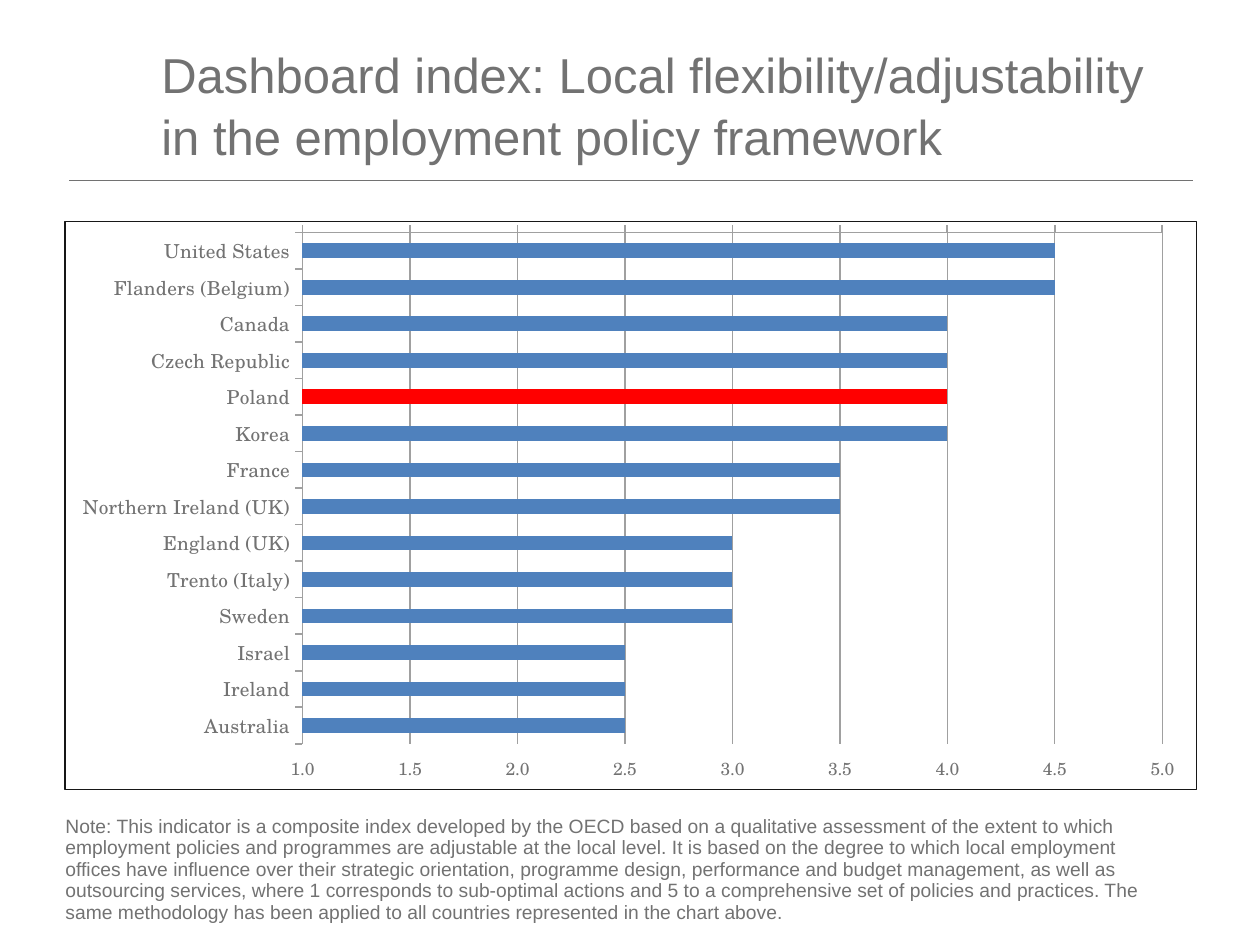
import pptx
import pptx.chart.data
import pptx.dml.color
import pptx.enum.chart
import pptx.enum.shapes
import pptx.enum.text
import pptx.oxml
import pptx.oxml.ns
import pptx.util

Pt = pptx.util.Pt
COLORS = {"text": "727272", "bar": "4F81BD", "highlight": "FF0000",
          "axis": "A0A0A0", "frame": "171717", "white": "FFFFFF"}
TITLE = "Dashboard index: Local flexibility/adjustability in the employment policy framework"
SCORES = {
    "United States": 4.5, "Flanders (Belgium)": 4.5, "Canada": 4, "Czech Republic": 4,
    "Poland": 4, "Korea": 4, "France": 3.5, "Northern Ireland (UK)": 3.5,
    "England (UK)": 3, "Trento (Italy)": 3, "Sweden": 3,
    "Israel": 2.5, "Ireland": 2.5, "Australia": 2.5,
}
HIGHLIGHTED = "Poland"
NOTE = (
    "Note: This indicator is a composite index developed by the OECD based on a qualitative "
    "assessment of the extent to which employment policies and programmes are adjustable at the "
    "local level. It is based on the degree to which local employment offices have influence over "
    "their strategic orientation, programme design, performance and budget management, as well as "
    "outsourcing services, where 1 corresponds to sub-optimal actions and 5 to a comprehensive set "
    "of policies and practices. The same methodology has been applied to all countries represented "
    "in the chart above."
)


def rgb(name):
    return pptx.dml.color.RGBColor.from_string(COLORS[name])


def xml(markup):
    """Parse one element, declaring the a: and c: namespaces on it."""
    tag, rest = markup.split(">", 1)
    closing = "/" if tag.endswith("/") else ""
    declared = f"{tag.rstrip('/')} {pptx.oxml.ns.nsdecls('a', 'c')}{closing}>{rest}"
    return pptx.oxml.parse_xml(declared)


def solid_line(tag, color, width):
    return (f'<{tag} w="{Pt(width)}"><a:solidFill><a:srgbClr val="{COLORS[color]}"/>'
            f'</a:solidFill></{tag}>')


def set_font(font, size, name="Arial"):
    font.size = Pt(size)
    font.name = name
    font.color.rgb = rgb("text")


def style_line(line, color, width):
    line.color.rgb = rgb(color)
    line.width = Pt(width)


def add_title(slide):
    title = slide.shapes.title
    title.left, title.top, title.width, title.height = Pt(85), Pt(18.7), Pt(584), Pt(80.6)
    frame = title.text_frame
    frame.text = TITLE
    frame.auto_size = pptx.enum.text.MSO_AUTO_SIZE.NONE
    frame.vertical_anchor = pptx.enum.text.MSO_ANCHOR.MIDDLE
    heading = frame.paragraphs[0]
    heading.alignment = pptx.enum.text.PP_ALIGN.LEFT
    heading.line_spacing = 1.05
    set_font(heading.font, 28)


def add_rule(slide):
    rule = slide.shapes.add_connector(
        pptx.enum.shapes.MSO_CONNECTOR.STRAIGHT, Pt(39.6), Pt(103), Pt(681.8), Pt(103))
    style_line(rule.line, "text", 0.5)
    rule._element.spPr.append(xml("<a:effectLst/>"))


def style_axes(chart):
    enums = pptx.enum.chart
    countries, index = chart.category_axis, chart.value_axis
    for axis in (countries, index):
        axis.major_tick_mark = enums.XL_TICK_MARK.OUTSIDE
        axis.minor_tick_mark = enums.XL_TICK_MARK.NONE
        style_line(axis.format.line, "axis", 1)
    countries.reverse_order = True
    set_font(countries.tick_labels.font, 11, "TeX Gyre Schola")

    # Reversed categories put the axis on top; its labels stay at the bottom
    index.tick_label_position = enums.XL_TICK_LABEL_POSITION.HIGH
    index.minimum_scale, index.maximum_scale, index.major_unit = 1, 5, 0.5
    index.tick_labels.number_format = "0.0"
    index.tick_labels.number_format_is_linked = False
    index.has_major_gridlines = True
    style_line(index.major_gridlines.format.line, "axis", 0.75)


def add_index_chart(slide):
    scores = pptx.chart.data.CategoryChartData()
    scores.categories = list(SCORES)
    scores.add_series("Series 1", list(SCORES.values()))
    chart = slide.shapes.add_chart(
        pptx.enum.chart.XL_CHART_TYPE.BAR_CLUSTERED,
        Pt(36.7), Pt(126), Pt(647.3), Pt(325.4), scores).chart
    chart.has_legend = False
    chart.has_title = False
    set_font(chart.font, 10, "TeX Gyre Schola")
    style_axes(chart)

    # Bars
    plot = chart.plots[0]
    plot.gap_width = 150
    plot.vary_by_categories = False
    bars = plot.series[0]
    bars.format.fill.solid()
    bars.format.fill.fore_color.rgb = rgb("bar")
    highlight = bars.points[list(SCORES).index(HIGHLIGHTED)].format.fill
    highlight.solid()
    highlight.fore_color.rgb = rgb("highlight")

    # Inner plot area, as fractions of the chart
    area = {"x": 0.21, "y": 0.02, "w": 0.76, "h": 0.9}
    modes = "".join(f'<c:{key}Mode val="edge"/>' for key in "xy")
    sizes = "".join(f'<c:{key} val="{value}"/>' for key, value in area.items())
    plot_area = chart._chartSpace.chart.plotArea
    for old in plot_area.findall(pptx.oxml.ns.qn("c:layout")):
        plot_area.remove(old)
    plot_area.insert(0, xml('<c:layout><c:manualLayout><c:layoutTarget val="inner"/>'
                            f'{modes}{sizes}</c:manualLayout></c:layout>'))

    # Frame around the chart
    text_style = chart._chartSpace.find(pptx.oxml.ns.qn("c:txPr"))
    text_style.addprevious(xml(f'<c:spPr><a:noFill/>{solid_line("a:ln", "frame", 0.75)}</c:spPr>'))


def add_note(slide):
    table = slide.shapes.add_table(1, 1, Pt(36.7), Pt(463), Pt(617.8), Pt(67)).table
    table.first_row = table.horz_banding = False
    cell = table.cell(0, 0)
    cell.text = NOTE
    cell.vertical_anchor = pptx.enum.text.MSO_ANCHOR.MIDDLE
    cell.margin_left = cell.margin_right = cell.margin_top = Pt(0.7)
    cell.margin_bottom = 0
    cell.fill.solid()
    cell.fill.fore_color.rgb = rgb("white")
    set_font(cell.text_frame.paragraphs[0].font, 11)
    properties = cell._tc.get_or_add_tcPr()
    for position, side in enumerate("LRTB"):
        properties.insert(position, xml(solid_line(f"a:ln{side}", "white", 1)))


def main():
    deck = pptx.Presentation()
    deck.slide_width, deck.slide_height = Pt(720), Pt(540)
    slide = deck.slides.add_slide(deck.slide_layouts.get_by_name("Title Only"))
    add_rule(slide)
    add_title(slide)
    add_index_chart(slide)
    add_note(slide)
    deck.save("out.pptx")


if __name__ == "__main__":
    main()
